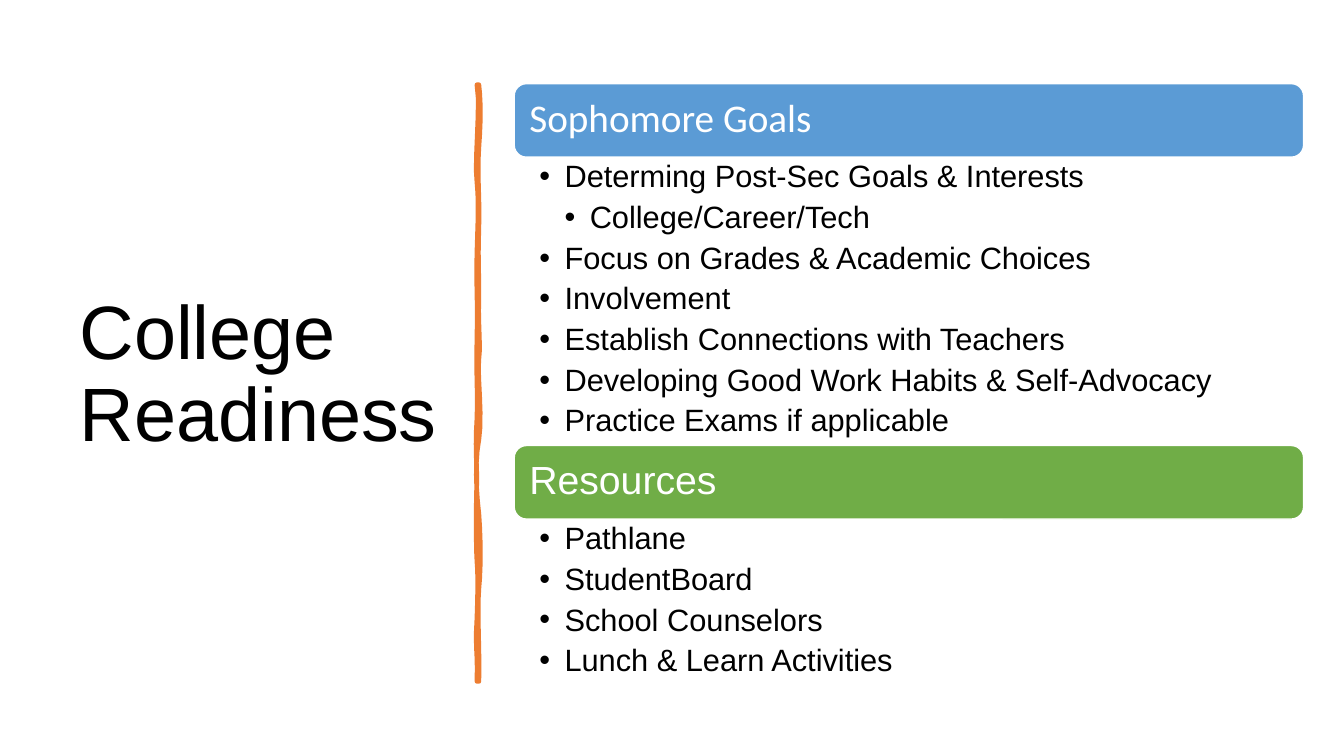
from dataclasses import dataclass

from pptx import Presentation
from pptx import util as u
from pptx.dml.color import RGBColor
from pptx.enum import shapes, text
from pptx.oxml import parse_xml
from pptx.oxml.ns import nsdecls


@dataclass(frozen=True)
class Theme:
    ink: str = "000000"
    paper: str = "FFFFFF"
    accent: str = "ED7D31"
    font: str = "Arial"
    title: float = 54
    heading: float = 28
    body: float = 22


@dataclass(frozen=True)
class Section:
    top: float
    height: float
    color: str
    font: str
    heading: str
    bullets: tuple[tuple[int, str], ...]  # (level, wording)


T = Theme()
LEFT, WIDTH, BAR = 5.1, 7.83, 0.73

SECTIONS = (
    Section(0.83, 2.85, "5B9BD5", "Calibri", "Sophomore Goals", (
        (1, "Determing Post-Sec Goals & Interests"),
        (2, "College/Career/Tech"),
        (1, "Focus on Grades & Academic Choices"),
        (1, "Involvement"),
        (1, "Establish Connections with Teachers"),
        (1, "Developing Good Work Habits & Self-Advocacy"),
        (1, "Practice Exams if applicable"),
    )),
    Section(4.42, 1.65, "70AD47", T.font, "Resources", (
        (1, "Pathlane"),
        (1, "StudentBoard"),
        (1, "School Counselors"),
        (1, "Lunch & Learn Activities"),
    )),
)

# Divider edges: first point, then (control, control, end) per curve
RIGHT_EDGE = (
    (4.75, 0.84),
    (4.77, 1.02), (4.77, 1.19), (4.75, 1.46),
    (4.73, 1.73), (4.76, 1.95), (4.75, 2.26),
    (4.74, 2.57), (4.75, 2.62), (4.75, 2.94),
    (4.74, 3.25), (4.77, 3.42), (4.75, 3.56),
    (4.73, 3.7), (4.79, 4.14), (4.75, 4.36),
    (4.71, 4.57), (4.72, 4.84), (4.75, 5.1),
    (4.77, 5.36), (4.77, 5.64), (4.75, 5.84),
    (4.73, 6.03), (4.76, 6.5), (4.75, 6.76),
)
LEFT_EDGE = (
    (4.73, 6.76),
    (4.74, 6.46), (4.71, 6.44), (4.73, 6.13),
    (4.74, 5.83), (4.74, 5.7), (4.73, 5.57),
    (4.72, 5.44), (4.72, 4.95), (4.73, 4.77),
    (4.73, 4.59), (4.71, 4.45), (4.73, 4.15),
    (4.74, 3.86), (4.72, 3.73), (4.73, 3.35),
    (4.74, 2.98), (4.72, 2.81), (4.73, 2.5),
    (4.74, 2.18), (4.75, 2.0), (4.73, 1.81),
    (4.7, 1.63), (4.77, 1.04), (4.73, 0.84),
)


def rgb(color: str) -> RGBColor:
    return RGBColor.from_string(color)


def add_text(s, box: tuple[float, ...], lines, *, size: float, color: str = T.ink,
             font: str = T.font, insets: tuple[float, ...] = (0.1, 0.05, 0.1, 0.05),
             middle: bool = True, after: float = 0) -> None:
    """Write (level, wording) lines; level 0 has no bullet."""
    tf = s.shapes.add_textbox(*map(u.Inches, box)).text_frame
    tf.word_wrap = True
    tf.vertical_anchor = text.MSO_ANCHOR.MIDDLE if middle else text.MSO_ANCHOR.TOP
    tf.margin_left, tf.margin_top, tf.margin_right, tf.margin_bottom = map(u.Inches, insets)
    for i, (level, wording) in enumerate(lines):
        p = tf.add_paragraph() if i else tf.paragraphs[0]
        p.line_spacing = 0.9
        p.space_after = u.Pt(after)
        if level:
            p.level = level
            pPr = p._p.get_or_add_pPr()
            pPr.set("marL", str(u.Inches(0.25 * level)))
            pPr.set("indent", str(u.Inches(-0.25)))
            pPr.append(parse_xml(f'<a:buFont {nsdecls("a")} typeface="Arial"/>'))
            pPr.append(parse_xml(f'<a:buChar {nsdecls("a")} char="•"/>'))
        r = p.add_run()
        r.text = wording
        r.font.size, r.font.name = u.Pt(size), font
        r.font.color.rgb = rgb(color)


def paint(sp, fill: str, line: str, width: float) -> None:
    sp.shadow.inherit = False
    sp.fill.solid()
    sp.fill.fore_color.rgb = rgb(fill)
    sp.line.color.rgb = rgb(line)
    sp.line.width = u.Pt(width)


def flatten(edge: tuple, steps: int = 6) -> list[tuple[int, int]]:
    """Turn a chain of cubic curves into points."""
    pts = [edge[0]]
    for i in range(0, len(edge) - 1, 3):
        a, b, c, d = edge[i:i + 4]
        for k in range(1, steps + 1):
            t = k / steps
            v = 1 - t
            pts.append(tuple(v**3 * a[j] + 3 * v * v * t * b[j] + 3 * v * t * t * c[j]
                             + t**3 * d[j] for j in (0, 1)))
    return [(u.Inches(x), u.Inches(y)) for x, y in pts]


def add_divider(s) -> None:
    start, *rest = flatten(RIGHT_EDGE) + flatten(LEFT_EDGE)
    fb = s.shapes.build_freeform(*start)
    fb.add_line_segments(rest, close=True)
    paint(fb.convert_to_shape(), T.accent, T.accent, 3.25)


def add_section(s, sec: Section) -> None:
    # Heading bar
    sp = s.shapes.add_shape(shapes.MSO_SHAPE.ROUNDED_RECTANGLE,
                            *map(u.Inches, (LEFT, sec.top, WIDTH, BAR)))
    paint(sp, sec.color, T.paper, 1)
    add_text(s, (LEFT + 0.03, sec.top + 0.03, WIDTH - 0.07, 0.66), [(0, sec.heading)],
             size=T.heading, color=T.paper, font=sec.font, insets=(0.12,) * 4)
    # Bullets
    add_text(s, (LEFT, sec.top + BAR, WIDTH, sec.height), sec.bullets, size=T.body,
             insets=(0.25, 0.04, 0.22, 0.04), middle=False, after=5.3)


def main() -> None:
    prs = Presentation()
    prs.slide_width, prs.slide_height = u.Inches(13.33), u.Inches(7.5)
    s = prs.slides.add_slide(prs.slide_layouts[6])
    add_text(s, (0.69, 0.7, 3.88, 6.06), [(0, "College Readiness")], size=T.title)
    add_divider(s)
    for sec in SECTIONS:
        add_section(s, sec)
    prs.save("out.pptx")


if __name__ == "__main__":
    main()
